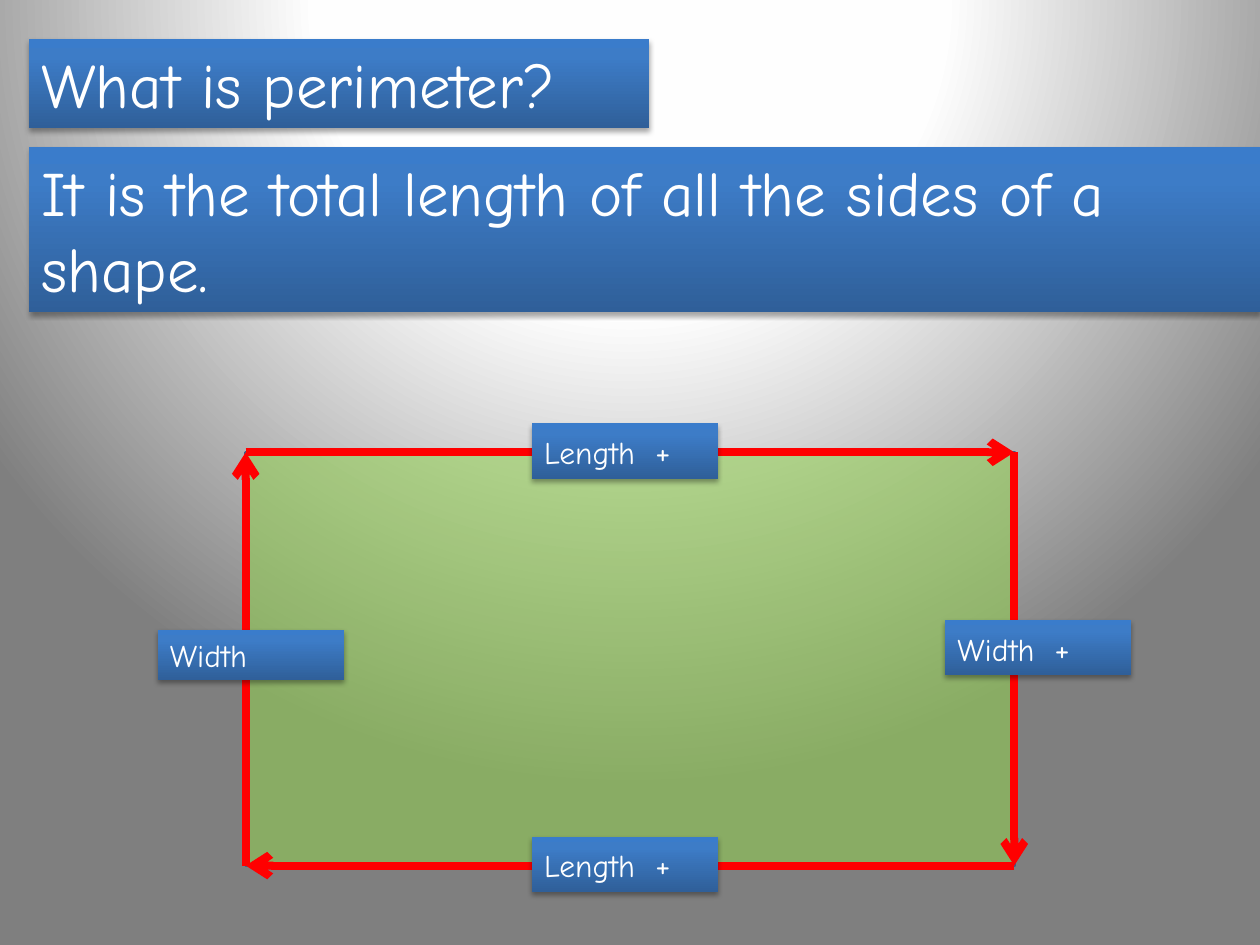
from lxml import etree
from pptx import Presentation
from pptx.dml.color import RGBColor
from pptx.enum import shapes, text
from pptx.oxml import parse_xml
from pptx.oxml.ns import nsdecls, qn
from pptx.util import Inches, Pt

FONT = "Comic Neue"
BANNER_STOPS = [(0, "2F5F99"), (80, "3D7CC7"), (100, "3A7CCB")]
BACKGROUND_STOPS = [(0, "FFFFFF"), (40, "FEFEFE"), (100, "7F7F7F")]


def color(value):
    return RGBColor.from_string(value)


def gradient(stops, direction):
    items = "".join(
        f'<a:gs pos="{position * 1000}"><a:srgbClr val="{value}"/></a:gs>'
        for position, value in stops)
    return parse_xml(f'<a:gradFill {nsdecls("a")} rotWithShape="1">'
                     f'<a:gsLst>{items}</a:gsLst>{direction}</a:gradFill>')


def add_background(slide):
    slide.background.fill.solid()
    properties = slide.background._cSld.bg.bgPr
    solid = properties.find(qn("a:solidFill"))
    properties.replace(solid, gradient(
        BACKGROUND_STOPS,
        '<a:path path="circle"><a:fillToRect l="50000" t="-80000" '
        'r="50000" b="180000"/></a:path>'))


def add_text(paragraph, content, size=18, value="FFFFFF", spacing=None):
    run = paragraph.add_run()
    run.text = content
    run.font.name = FONT
    run.font.size = Pt(size)
    run.font.color.rgb = color(value)
    if spacing:
        run.font._element.set("spc", str(spacing))


def add_banner(slide, left, top, width, height):
    """Blue gradient box with a soft shadow; returns its paragraph."""
    shape = slide.shapes.add_shape(
        shapes.MSO_SHAPE.RECTANGLE, Inches(left), Inches(top),
        Inches(width), Inches(height))
    shape.line.fill.background()
    shape.fill.solid()
    properties = shape._element.spPr
    properties.replace(properties.find(qn("a:solidFill")),
                       gradient(BANNER_STOPS, '<a:lin ang="16200000" scaled="0"/>'))
    properties.append(parse_xml(
        f'<a:effectLst {nsdecls("a")}><a:outerShdw blurRad="{Pt(3.1)}" '
        f'dist="{Pt(1.8)}" dir="5400000" rotWithShape="0">'
        '<a:srgbClr val="000000"><a:alpha val="35000"/></a:srgbClr>'
        '</a:outerShdw></a:effectLst>'))
    frame = shape.text_frame
    frame.word_wrap = True
    frame.auto_size = text.MSO_AUTO_SIZE.SHAPE_TO_FIT_TEXT
    frame.vertical_anchor = text.MSO_ANCHOR.TOP
    paragraph = frame.paragraphs[0]
    paragraph.alignment = text.PP_ALIGN.LEFT
    return paragraph


def add_arrow(slide, start, end):
    arrow = slide.shapes.add_connector(
        shapes.MSO_CONNECTOR.STRAIGHT, *map(Inches, start + end))
    arrow.line.color.rgb = color("FF0000")
    arrow.line.width = Pt(4.5)
    etree.SubElement(arrow.line._get_or_add_ln(), qn("a:tailEnd"), type="arrow")
    etree.SubElement(arrow._element.spPr, qn("a:effectLst"))


def add_definition(slide, left, top):
    # Question and answer
    add_text(add_banner(slide, left, top, 4.92, 0.71),
             "What is perimeter?", size=36)
    add_text(add_banner(slide, left, top + 0.86, 9.77, 1.31),
             "It is the total length of all the sides of a shape.", size=36)


def add_perimeter(slide, left, top, width, height):
    # Translucent rectangle
    area = slide.shapes.add_shape(
        shapes.MSO_SHAPE.RECTANGLE, Inches(left), Inches(top),
        Inches(width), Inches(height))
    area.shadow.inherit = False
    area.fill.solid()
    area.fill.fore_color.rgb = color("92D050")
    fill_color = area._element.spPr.find(qn("a:solidFill"))[0]
    etree.SubElement(fill_color, qn("a:alpha"), val="56000")
    area.line.color.rgb = color("3A5F8C")
    area.line.width = Pt(2)

    # Arrows clockwise around the sides
    right, bottom = left + width, top + height
    corners = [(left, top), (right, top), (right, bottom), (left, bottom)]
    for index, corner in enumerate(corners):
        add_arrow(slide, corner, corners[(index + 1) % 4])

    # Side labels
    labels = [("Length", "+", 2.27, -0.23, 0.44),
              ("Length", "+", 2.27, height - 0.23, 0.44),
              ("Width", "+", 5.55, 1.33, 0.44),
              ("Width", "", -0.7, 1.41, 0.4)]
    for name, sign, across, down, label_height in labels:
        paragraph = add_banner(slide, left + across, top + down,
                               1.48, label_height)
        add_text(paragraph, name)
        if sign:
            add_text(paragraph, " ", spacing=540)
            add_text(paragraph, sign, size=20)


def main():
    presentation = Presentation()
    presentation.slide_width = Inches(10)
    presentation.slide_height = Inches(7.5)
    slide = presentation.slides.add_slide(presentation.slide_layouts[6])
    add_background(slide)
    add_definition(slide, 0.23, 0.31)
    add_perimeter(slide, 1.95, 3.59, 6.1, 3.28)
    presentation.save("out.pptx")


if __name__ == "__main__":
    main()
